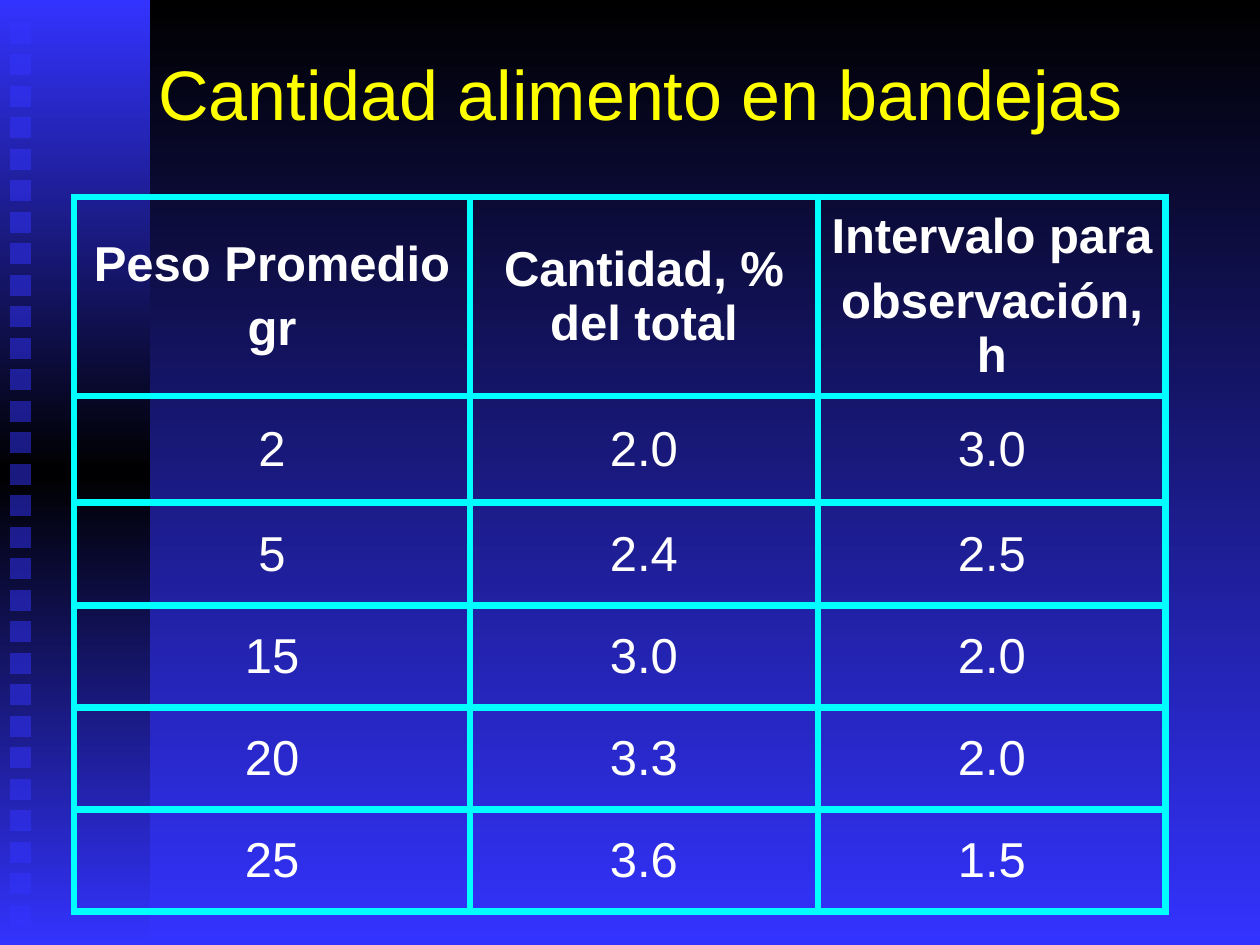
import copy
from dataclasses import dataclass

import lxml.etree
import pptx
import pptx.dml.color
import pptx.enum.shapes
import pptx.enum.text
import pptx.oxml
import pptx.oxml.ns
import pptx.util

SCALE = 914400 / 126  # EMU per px
WIDE, HIGH = 1260, 945


@dataclass(frozen=True)
class Theme:
    font: str = "Arial"
    blue: str = "3333FF"
    black: str = "000000"
    title: str = "FFFF00"
    text: str = "FFFFFF"
    border: str = "00FFFF"
    title_size: float = 40
    cell_size: float = 28
    cell_gap: float = 5.6
    border_width: float = 4.5


THEME = Theme()
COLS = [396, 348, 348]
ROWS = [185, 107, 103, 102, 102, 102]
HEADS = ["Peso Promedio\ngr", "Cantidad, % del total", "Intervalo para\nobservación, h"]
DATA = [
    ["2", "2.0", "3.0"],
    ["5", "2.4", "2.5"],
    ["15", "3.0", "2.0"],
    ["20", "3.3", "2.0"],
    ["25", "3.6", "1.5"],
]


def px(*vals):
    return [round(val * SCALE) for val in vals]


def rgb(code):
    return pptx.dml.color.RGBColor.from_string(code)


def put_text(frame, text, size, color, bold=False, gap=0):
    """Write centred text, one paragraph to each line."""
    frame.word_wrap = True
    frame.text = text
    for para in frame.paragraphs:
        para.alignment = pptx.enum.text.PP_ALIGN.CENTER
        para.space_before = pptx.util.Pt(gap)
        font = para.font
        font.name, font.size, font.bold = THEME.font, pptx.util.Pt(size), bold
        font.color.rgb = rgb(color)


def shade(fill, owner, colors):
    """Fill from top to bottom with evenly spaced colours."""
    fill.gradient()
    fill.gradient_angle = 270
    stops = next(owner.iter(pptx.oxml.ns.qn("a:gsLst")))
    while len(stops) < len(colors):
        stops.append(copy.deepcopy(stops[-1]))
    for i, (stop, color) in enumerate(zip(fill.gradient_stops, colors)):
        stop.position = i / (len(colors) - 1)
        stop.color.rgb = rgb(color)


def add_rect(slide, *box):
    kind = pptx.enum.shapes.MSO_SHAPE.RECTANGLE
    rect = slide.shapes.add_shape(kind, *px(*box))
    rect.shadow.inherit = False
    rect.line.fill.background()
    return rect


def add_strip(slide):
    strip = add_rect(slide, 0, 0, 150, HIGH)
    shade(strip.fill, strip.element, [THEME.blue, THEME.black, THEME.blue])
    for i in range(29):
        square = add_rect(slide, 10, 23 + 63 * i // 2, 21, 21)
        square.fill.solid()
        square.fill.fore_color.rgb = rgb(THEME.blue)
        color = next(square.element.iter(pptx.oxml.ns.qn("a:srgbClr")))
        lxml.etree.SubElement(color, pptx.oxml.ns.qn("a:alpha"), val="50000")


def add_title(slide, text):
    frame = slide.shapes.add_textbox(*px(63, 32, 1155, 122)).text_frame
    frame.vertical_anchor = pptx.enum.text.MSO_ANCHOR.MIDDLE
    put_text(frame, text, THEME.title_size, THEME.title)


def edge(cell):
    props = cell._tc.get_or_add_tcPr()
    width = pptx.util.Pt(THEME.border_width)
    for side in "LRTB":
        props.append(pptx.oxml.parse_xml(
            f'<a:ln{side} {pptx.oxml.ns.nsdecls("a")} w="{width}"><a:solidFill>'
            f'<a:srgbClr val="{THEME.border}"/></a:solidFill></a:ln{side}>'))


def add_grid(slide):
    cells = [HEADS] + DATA
    box = px(74, 197, sum(COLS), sum(ROWS))
    table = slide.shapes.add_table(len(ROWS), len(COLS), *box).table
    table.first_row = table.horz_banding = False
    for col, width in zip(table.columns, px(*COLS)):
        col.width = width
    for row, height in zip(table.rows, px(*ROWS)):
        row.height = height
    for r, texts in enumerate(cells):
        for c, text in enumerate(texts):
            cell = table.cell(r, c)
            cell.vertical_anchor = pptx.enum.text.MSO_ANCHOR.MIDDLE
            edge(cell)
            cell.fill.background()
            put_text(cell.text_frame, text, THEME.cell_size, THEME.text,
                     bold=r == 0, gap=THEME.cell_gap)


def main():
    deck = pptx.Presentation()
    deck.slide_width, deck.slide_height = px(WIDE, HIGH)
    slide = deck.slides.add_slide(deck.slide_layouts[6])
    shade(slide.background.fill, slide.element, [THEME.black, THEME.blue])
    add_strip(slide)
    add_title(slide, "Cantidad alimento en bandejas")
    add_grid(slide)
    deck.save("out.pptx")


if __name__ == "__main__":
    main()
